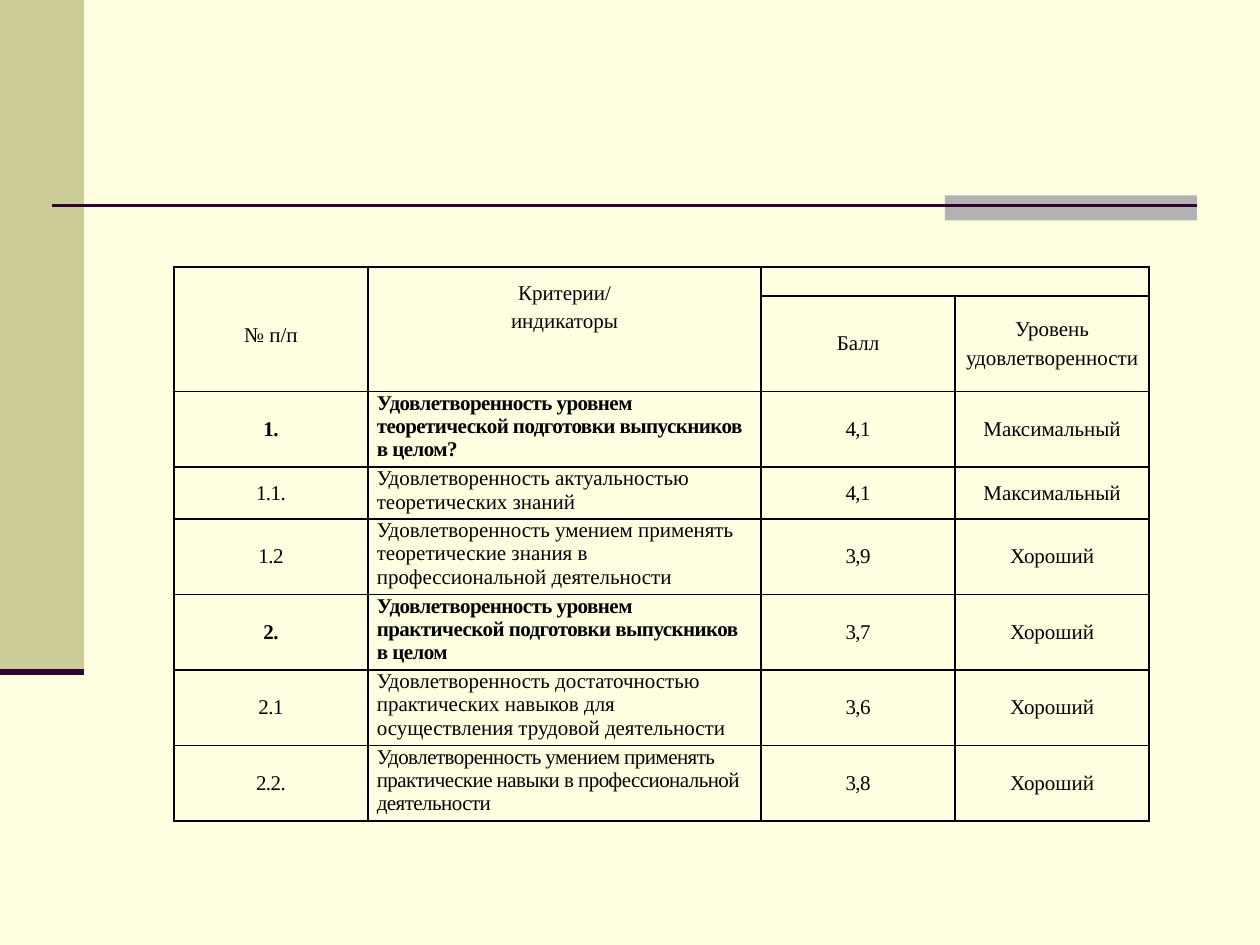
from dataclasses import dataclass
from itertools import product

from lxml.etree import SubElement
from pptx import Presentation
from pptx.dml.color import RGBColor
from pptx.enum.shapes import MSO_CONNECTOR, MSO_SHAPE
from pptx.enum.text import MSO_ANCHOR, PP_ALIGN
from pptx.oxml import parse_xml
from pptx.oxml.ns import nsdecls, qn
from pptx.util import Pt


@dataclass(frozen=True)
class Theme:
    back: str = "FFFFE1"
    band: str = "CCCC99"
    tab: str = "B2B2B2"
    rule: str = "330033"
    ink: str = "000000"
    font: str = "Times New Roman"
    size: float = 12
    gap: float = 3
    inset: float = 5.04
    tight: int = -30


def write(cell, text, theme, bold=False, tight=False, align=PP_ALIGN.CENTER,
          anchor=MSO_ANCHOR.MIDDLE, spacing=None, bottom=0):
    """Fill a cell, one paragraph for each line of text."""
    cell.vertical_anchor = anchor
    cell.margin_left = cell.margin_right = Pt(theme.inset)
    cell.margin_top, cell.margin_bottom = 0, Pt(bottom)
    frame = cell.text_frame
    for i, line in enumerate(text.split("\n")):
        para = frame.add_paragraph() if i else frame.paragraphs[0]
        para.alignment = align
        para.space_before = Pt(theme.gap)
        if spacing:
            para.line_spacing = spacing
        if not line:
            end = SubElement(para._p, qn("a:endParaRPr"))
            end.set("sz", str(int(theme.size * 100)))
            continue
        run = para.add_run()
        run.text = line
        font = run.font
        font.name, font.size, font.bold = theme.font, Pt(theme.size), bold
        font.color.rgb = RGBColor.from_string(theme.ink)
        if tight:
            font._element.set("spc", str(theme.tight))


class Page:
    def __init__(self, deck, theme):
        self.theme = theme
        self.slide = deck.slides.add_slide(deck.slide_layouts[6])
        fill = self.slide.background.fill
        fill.solid()
        fill.fore_color.rgb = RGBColor.from_string(theme.back)

    def rect(self, x, y, w, h, color):
        box = self.slide.shapes.add_shape(
            MSO_SHAPE.RECTANGLE, Pt(x), Pt(y), Pt(w), Pt(h))
        box.shadow.inherit = False
        box.fill.solid()
        box.fill.fore_color.rgb = RGBColor.from_string(color)
        box.line.fill.background()

    def rule(self, x, y, end, width):
        line = self.slide.shapes.add_connector(
            MSO_CONNECTOR.STRAIGHT, Pt(x), Pt(y), Pt(end), Pt(y))
        line.line.color.rgb = RGBColor.from_string(self.theme.rule)
        line.line.width = Pt(width)
        SubElement(line._element.spPr, qn("a:effectLst"))

    def grid(self, x, y, cols, rows):
        """Add a plain table with a thin border round every cell."""
        table = self.slide.shapes.add_table(
            len(rows), len(cols), Pt(x), Pt(y), Pt(sum(cols)), Pt(sum(rows))).table
        table.first_row = table.horz_banding = False
        for col, width in zip(table.columns, cols):
            col.width = Pt(width)
        for row, height in zip(table.rows, rows):
            row.height = Pt(height)
        for r, c in product(range(len(rows)), range(len(cols))):
            self.frame(table.cell(r, c))
        return table

    def frame(self, cell):
        cell.fill.background()
        props = cell._tc.get_or_add_tcPr()
        for i, side in enumerate("LRTB"):
            props.insert(i, parse_xml(
                f'<a:ln{side} {nsdecls("a")} w="{Pt(1)}"><a:solidFill>'
                f'<a:srgbClr val="{self.theme.ink}"/></a:solidFill></a:ln{side}>'))


HEADS = [
    (0, 0, "№ п/п", {"spacing": 1.5}),
    (0, 1, "Критерии/\nиндикаторы", {"bottom": 25}),
    (0, 2, "", {}),
    (0, 3, "", {}),
    (1, 0, "", {}),
    (1, 1, "", {}),
    (1, 2, "Балл", {}),
    (1, 3, "Уровень\nудовлетворенности", {}),
]
ROWS = [
    ("1.", "Удовлетворенность уровнем теоретической подготовки выпускников в целом?",
     "4,1", "Максимальный"),
    ("1.1.", "Удовлетворенность актуальностью теоретических знаний",
     "4,1", "Максимальный"),
    ("1.2", "Удовлетворенность умением применять теоретические знания "
     "в профессиональной деятельности", "3,9", "Хороший"),
    ("2.", "Удовлетворенность уровнем практической подготовки выпускников в целом",
     "3,7", "Хороший"),
    ("2.1", "Удовлетворенность достаточностью практических навыков "
     "для осуществления трудовой деятельности", "3,6", "Хороший"),
    ("2.2.", "Удовлетворенность умением применять практические навыки "
     "в профессиональной деятельности", "3,8", "Хороший"),
]
BOLD = {"1.", "2."}
TIGHT = BOLD | {"2.2."}


def main():
    deck = Presentation()
    deck.slide_width, deck.slide_height = Pt(720), Pt(540)
    theme = Theme()
    page = Page(deck, theme)

    page.rect(0, 0, 48, 384, theme.band)
    page.rect(540, 111.6, 144, 14.4, theme.tab)
    page.rule(30, 117.6, 684, 1.5)
    page.rule(0, 384, 48, 3.5)

    tall, short = 43.15, 29.7
    table = page.grid(99.4, 152.6, [110.9, 224.6, 110.9, 110.9],
                      [16.5, 54.3, tall, short] + [tall] * 4)
    for r, c, text, style in HEADS:
        write(table.cell(r, c), text, theme, **style)
    for start, end in [((0, 0), (1, 0)), ((0, 1), (1, 1)), ((0, 2), (0, 3))]:
        table.cell(*start).merge(table.cell(*end))

    for r, (num, name, score, level) in enumerate(ROWS, 2):
        bold = num in BOLD
        write(table.cell(r, 0), num, theme, bold=bold, tight=True)
        write(table.cell(r, 1), name, theme, bold=bold, tight=num in TIGHT,
              align=PP_ALIGN.LEFT, anchor=MSO_ANCHOR.TOP)
        write(table.cell(r, 2), score, theme, tight=True)
        write(table.cell(r, 3), level, theme)
    deck.save("out.pptx")


if __name__ == "__main__":
    main()
